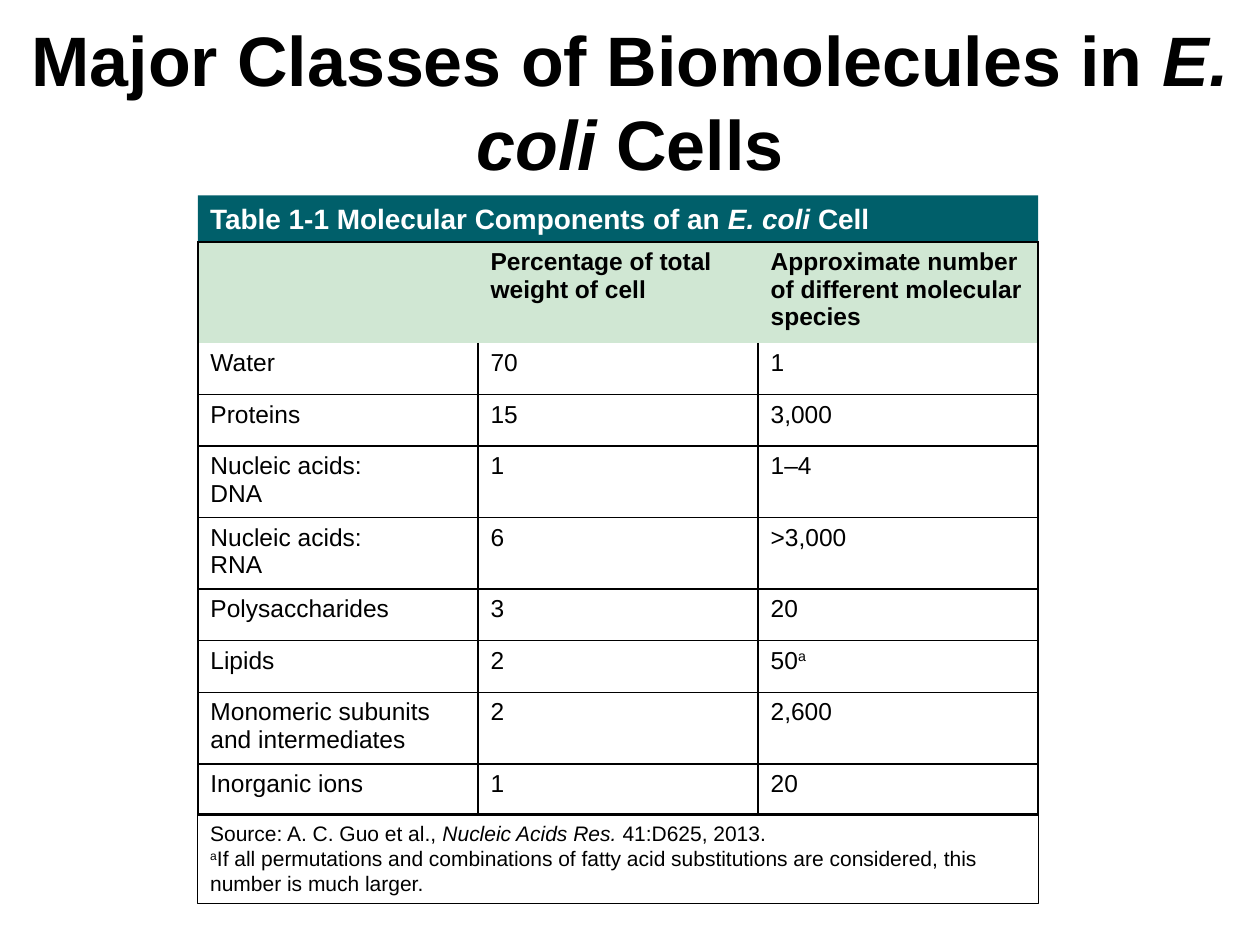
import pptx
import pptx.dml.color
import pptx.enum.text
import pptx.oxml
import pptx.oxml.ns
import pptx.util
from pptx.util import Inches

COLORS = {"black": "000000", "white": "FFFFFF", "teal": "005F6A", "mint": "D0E7D3"}
FONT = "Arial"
LEFT, WIDTH = 1.57, 6.67
ROW_HEIGHT = 0.41

# A run is a (text, style) pair; style is "", "italic" or "super"
TITLE = [("Major Classes of Biomolecules in ", ""), ("E. coli ", "italic"), ("Cells", "")]
CAPTION = [("Table 1-1 Molecular Components of an ", ""), ("E. coli ", "italic"), ("Cell", "")]
SOURCE_NOTES = [
    [("Source: A. C. Guo et al., ", ""), ("Nucleic Acids Res.", "italic"),
     (" 41:D625, 2013.", "")],
    [("a", "super"), ("If all permutations and combinations of fatty acid substitutions "
                      "are considered, this number is much larger.", "")],
]
ROWS = [
    ["", "Percentage of total weight of cell",
     "Approximate number of different molecular species"],
    ["Water", "70", "1"],
    ["Proteins", "15", "3,000"],
    ["Nucleic acids:\nDNA", "1", "1–4"],
    ["Nucleic acids:\nRNA", "6", ">3,000"],
    ["Polysaccharides", "3", "20"],
    ["Lipids", "2", [("50", ""), ("a", "super")]],
    ["Monomeric subunits and intermediates", "2", "2,600"],
    ["Inorganic ions", "1", "20"],
]


def rgb(name):
    return pptx.dml.color.RGBColor.from_string(COLORS[name])


def add_runs(paragraph, runs, size, color="black", bold=False):
    for text, style in runs:
        for number, line in enumerate(text.split("\n")):
            if number:
                paragraph.add_line_break()
            run = paragraph.add_run()
            run.text = line
            run.font.name = FONT
            run.font.size = pptx.util.Pt(size)
            run.font.bold = bold
            run.font.italic = style == "italic"
            run.font.color.rgb = rgb(color)
            if style == "super":
                run.font._element.set("baseline", "30000")


def add_title(slide):
    title = slide.shapes.title
    title.left, title.top = Inches(0), Inches(0.17)
    title.width, title.height = Inches(10), Inches(1.25)
    title.text_frame.vertical_anchor = pptx.enum.text.MSO_ANCHOR.MIDDLE
    title.text_frame.auto_size = pptx.enum.text.MSO_AUTO_SIZE.NONE
    paragraph = title.text_frame.paragraphs[0]
    paragraph.alignment = pptx.enum.text.PP_ALIGN.CENTER
    add_runs(paragraph, TITLE, 40, bold=True)


def add_text_bar(slide, top, height, paragraphs, size, color="black", bold=False):
    bar = slide.shapes.add_textbox(Inches(LEFT), Inches(top), Inches(WIDTH), Inches(height))
    frame = bar.text_frame
    frame.word_wrap = True
    frame.auto_size = pptx.enum.text.MSO_AUTO_SIZE.SHAPE_TO_FIT_TEXT
    for number, runs in enumerate(paragraphs):
        paragraph = frame.add_paragraph() if number else frame.paragraphs[0]
        add_runs(paragraph, runs, size, color, bold)
    return bar


def set_borders(cell, sides):
    properties = cell._tc.get_or_add_tcPr()
    for side in "LRTB":
        if side in sides:
            fill = f'<a:solidFill><a:srgbClr val="{COLORS["black"]}"/></a:solidFill>'
        else:
            fill = "<a:noFill/>"
        properties.append(pptx.oxml.parse_xml(
            f'<a:ln{side} {pptx.oxml.ns.nsdecls("a")} w="12700">{fill}</a:ln{side}>'))


def border_sides(row, column):
    if row == 0:
        return ("LT", "T", "TR")[column]
    return "LRB" if row == 1 else "LRTB"


def add_component_table(slide):
    column_count = len(ROWS[0])
    table = slide.shapes.add_table(
        len(ROWS), column_count, Inches(LEFT), Inches(1.92),
        Inches(WIDTH), Inches(ROW_HEIGHT * len(ROWS))).table
    table.first_row = False
    table.horz_banding = False
    for column in table.columns:
        column.width = Inches(WIDTH / column_count)
    for row, values in enumerate(ROWS):
        for column, value in enumerate(values):
            cell = table.cell(row, column)
            set_borders(cell, border_sides(row, column))
            cell.fill.solid()
            cell.fill.fore_color.rgb = rgb("white" if row else "mint")
            runs = [(value, "")] if isinstance(value, str) else value
            if value:
                add_runs(cell.text_frame.paragraphs[0], runs, 14, bold=row == 0)


def main():
    presentation = pptx.Presentation()
    presentation.slide_width, presentation.slide_height = Inches(10), Inches(7.5)
    slide = presentation.slides.add_slide(presentation.slide_layouts[5])

    add_title(slide)

    # Table caption
    caption = add_text_bar(slide, 1.55, 0.37, [CAPTION], 16, "white", bold=True)
    caption.fill.solid()
    caption.fill.fore_color.rgb = rgb("teal")

    add_component_table(slide)

    # Source and footnote
    notes = add_text_bar(slide, 6.46, 0.71, SOURCE_NOTES, 12)
    notes.line.color.rgb = rgb("black")
    notes.line.width = pptx.util.Pt(0.75)

    presentation.save("out.pptx")


if __name__ == "__main__":
    main()
